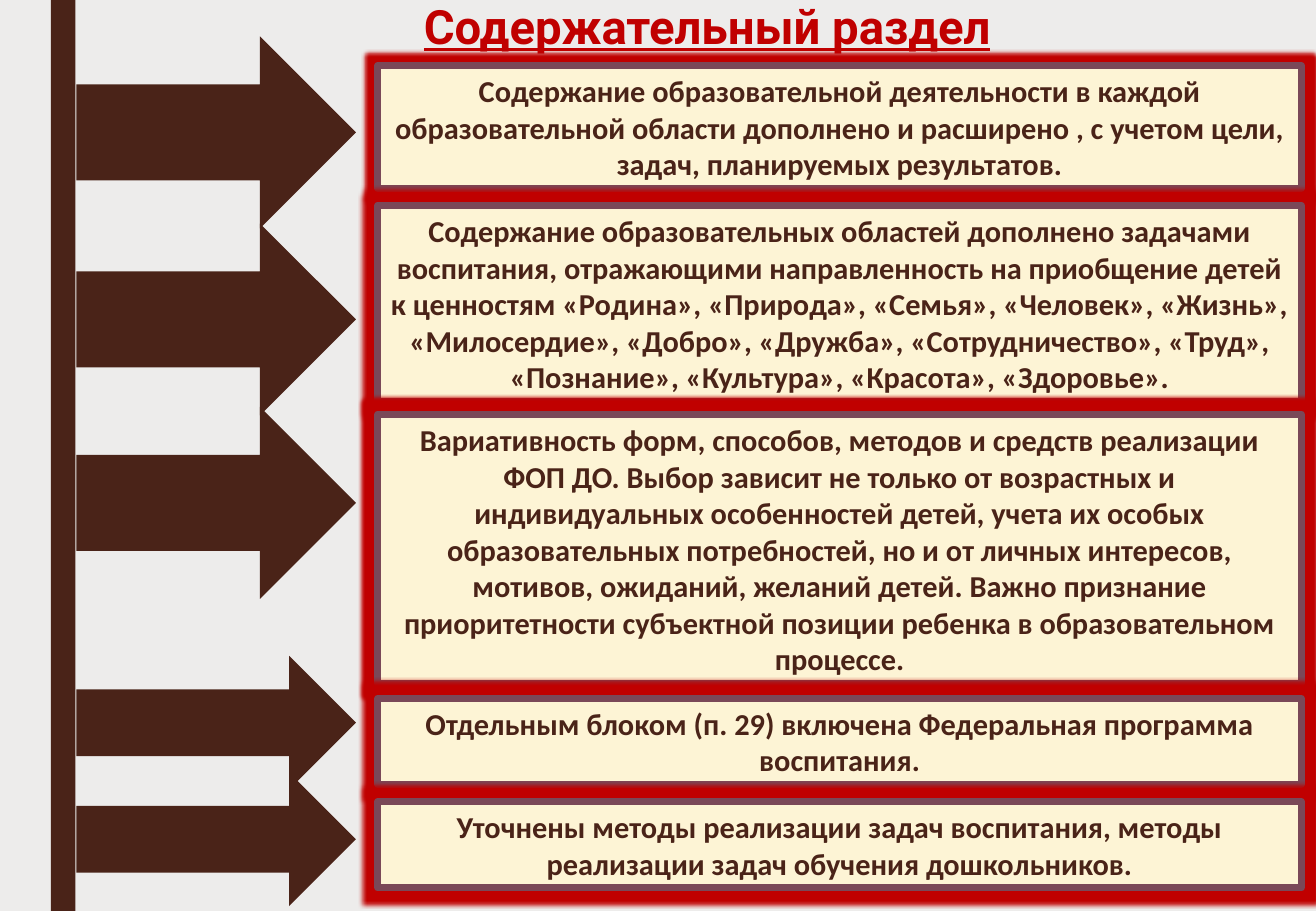
from lxml.etree import SubElement
from pptx import Presentation
from pptx.dml.color import RGBColor
from pptx.enum.shapes import MSO_SHAPE
from pptx.enum.text import MSO_ANCHOR, MSO_AUTO_SIZE, PP_ALIGN
from pptx.oxml.ns import qn
from pptx.util import Inches, Pt

BACKGROUND = RGBColor(0xED, 0xEC, 0xEB)
BROWN = RGBColor(0x4A, 0x23, 0x18)
CREAM = RGBColor(0xFD, 0xF4, 0xD5)
PLUM = RGBColor(0x7A, 0x48, 0x58)
RED = RGBColor(0xC0, 0x00, 0x00)

TITLE = "Содержательный раздел"
SECTIONS = [
    (0.54, 1.01, "Содержание образовательной деятельности в каждой образовательной области "
     "дополнено и расширено , с учетом цели, задач, планируемых результатов."),
    (1.69, 1.62, "Содержание образовательных областей дополнено задачами воспитания, "
     "отражающими направленность на приобщение детей к ценностям «Родина», «Природа», "
     "«Семья», «Человек», «Жизнь», «Милосердие», «Добро», «Дружба», «Сотрудничество», "
     "«Труд», «Познание», «Культура», «Красота», «Здоровье»."),
    (3.41, 2.22, "Вариативность форм, способов, методов и средств реализации ФОП ДО. "
     "Выбор зависит не только от возрастных и индивидуальных особенностей детей, учета их "
     "особых образовательных потребностей, но и от личных интересов, мотивов, ожиданий, "
     "желаний детей. Важно признание приоритетности субъектной позиции ребенка "
     "в образовательном процессе."),
    (5.75, 0.71, "Отдельным блоком (п. 29) включена Федеральная программа воспитания."),
    (6.6, 0.71, "Уточнены методы реализации задач воспитания, методы реализации задач "
     "обучения дошкольников."),
]
ARROWS = [(0.3, 1.58), (1.84, 1.58), (3.35, 1.58), (5.4, 1.1), (6.36, 1.1)]


def add_filled(slide, kind, left, top, width, height, color):
    shape = slide.shapes.add_shape(
        kind, Inches(left), Inches(top), Inches(width), Inches(height))
    shape.shadow.inherit = False
    shape.fill.solid()
    shape.fill.fore_color.rgb = color
    shape.line.fill.background()
    return shape


def write_text(shape, text, font_name, size, color, anchor):
    frame = shape.text_frame
    frame.word_wrap = True
    frame.auto_size = MSO_AUTO_SIZE.NONE
    frame.vertical_anchor = anchor
    para = frame.paragraphs[0]
    para.alignment = PP_ALIGN.CENTER
    span = para.add_run()
    span.text = text
    span.font.name = font_name
    span.font.size = Pt(size)
    span.font.bold = True
    span.font.color.rgb = color
    return span


def add_glow(shape, color, radius):
    effects = shape._element.spPr.find(qn("a:effectLst"))
    glow = SubElement(effects, qn("a:glow"), rad=str(int(radius)))
    SubElement(glow, qn("a:srgbClr"), val=str(color))


def main():
    deck = Presentation()
    deck.slide_width, deck.slide_height = Inches(10.83), Inches(7.5)
    page = deck.slides.add_slide(deck.slide_layouts[5])
    page.background.fill.solid()
    page.background.fill.fore_color.rgb = BACKGROUND

    add_filled(page, MSO_SHAPE.RECTANGLE, 0.42, 0, 0.2, 7.5, BROWN)

    title = page.shapes.title
    title.left, title.top = Inches(3.11), Inches(-0.07)
    title.width, title.height = Inches(5.42), Inches(0.57)
    span = write_text(title, TITLE, "Roboto", 28, RED, MSO_ANCHOR.TOP)
    span.font.underline = True

    for top, height, text in SECTIONS:
        box = add_filled(page, MSO_SHAPE.RECTANGLE, 3.11, top, 7.6, height, CREAM)
        box.line.color.rgb = PLUM
        box.line.width = Pt(4.25)
        add_glow(box, RED, Pt(5))
        write_text(box, text, "Calibri", 18, BROWN, MSO_ANCHOR.MIDDLE)

    for top, height in ARROWS:
        add_filled(page, MSO_SHAPE.RIGHT_ARROW, 0.63, top, 2.3, height, BROWN)

    deck.save("out.pptx")


if __name__ == "__main__":
    main()
